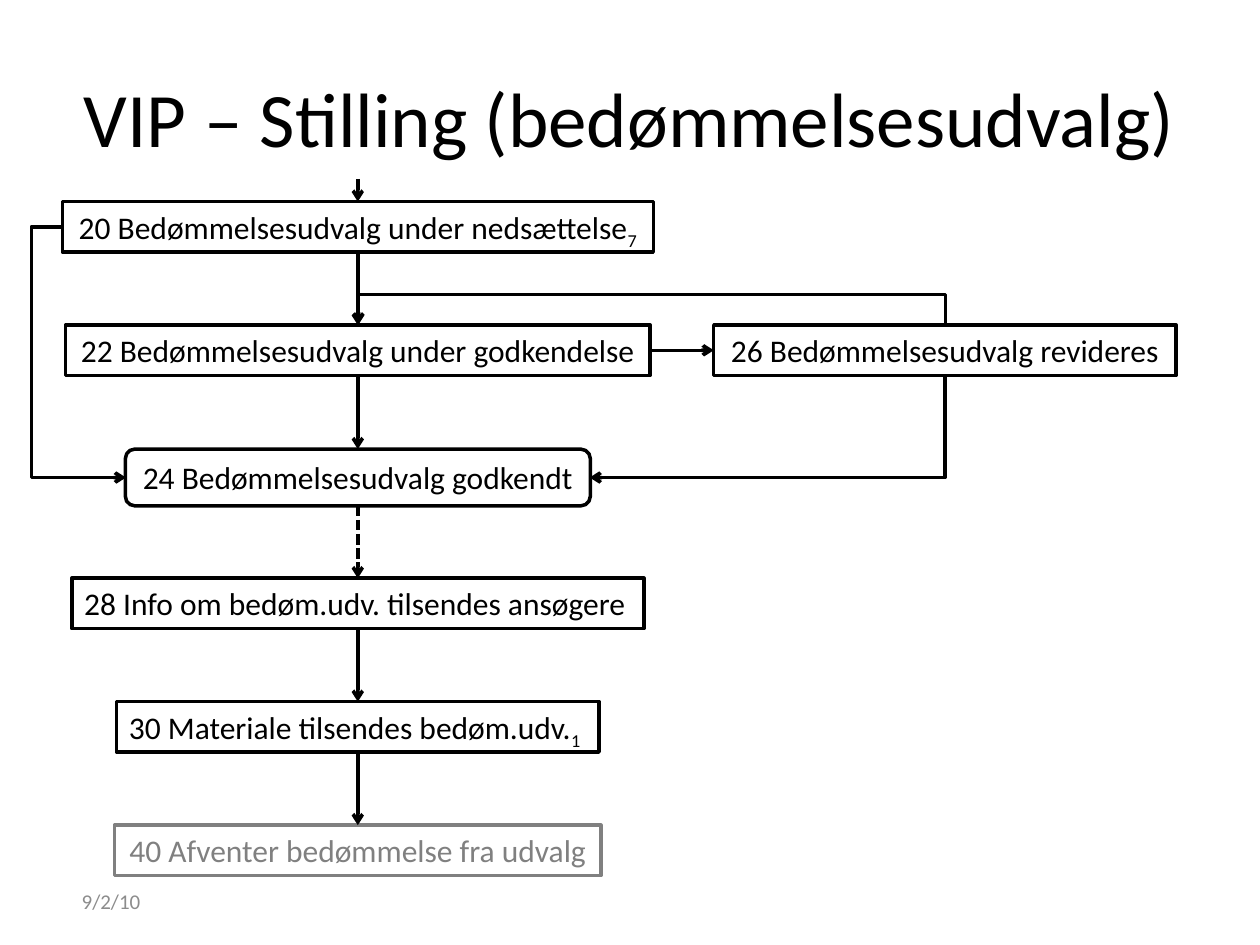
import pptx
import pptx.dml.color
import pptx.enum.dml
import pptx.enum.shapes
import pptx.enum.text
import pptx.oxml
import pptx.oxml.ns
import pptx.util
from lxml import etree

FONT = "Calibri"
BLACK, GREY, DATE_GREY = "000000", "808080", "8C8C8C"
TOP, LEFT, BOTTOM, RIGHT = range(4)  # connection sites of a box
ROW = 0.98
BOX_HEIGHT = 0.4
CENTER = pptx.enum.text.PP_ALIGN.CENTER
MIDDLE = pptx.enum.text.MSO_ANCHOR.MIDDLE
SHAPES = pptx.enum.shapes.MSO_SHAPE
CONNECTORS = pptx.enum.shapes.MSO_CONNECTOR

# number: (row, centre, width, height, colour, centred, text, subscript)
STEPS = {
    20: (0, 2.84, 4.69, BOX_HEIGHT, BLACK, True, "20 Bedømmelsesudvalg under nedsættelse", "7"),
    22: (1, 2.84, 4.64, BOX_HEIGHT, BLACK, True, "22 Bedømmelsesudvalg under godkendelse", ""),
    26: (1, 7.5, 3.67, BOX_HEIGHT, BLACK, True, "26 Bedømmelsesudvalg revideres", ""),
    24: (2.03, 2.84, 3.69, 0.45, BLACK, True, "24 Bedømmelsesudvalg godkendt", ""),
    28: (3.05, 2.84, 4.54, BOX_HEIGHT, BLACK, False, "28 Info om bedøm.udv. tilsendes ansøgere", ""),
    30: (4.05, 2.84, 3.83, BOX_HEIGHT, BLACK, False, "30 Materiale tilsendes bedøm.udv.", "1"),
    40: (5.05, 2.84, 3.86, BOX_HEIGHT, GREY, True, "40 Afventer bedømmelse fra udvalg", ""),
}


def color(value):
    return pptx.dml.color.RGBColor.from_string(value)


def inches(*values):
    return [pptx.util.Inches(value) for value in values]


def add_run(paragraph, text, size, hex_color):
    run = paragraph.add_run()
    run.text = text
    run.font.name = FONT
    run.font.size = pptx.util.Pt(size)
    run.font.color.rgb = color(hex_color)
    return run


def add_title(slide, box, text):
    title = slide.shapes.title
    title.left, title.top, title.width, title.height = inches(*box)
    title.text_frame.vertical_anchor = MIDDLE
    paragraph = title.text_frame.paragraphs[0]
    paragraph.alignment = CENTER
    add_run(paragraph, text, 44, BLACK)


def add_date(slide, box, text):
    frame = slide.shapes.add_textbox(*inches(*box)).text_frame
    frame.word_wrap = True
    frame.vertical_anchor = MIDDLE
    add_run(frame.paragraphs[0], text, 12, DATE_GREY)


def add_step(slide, box, preset, hex_color, centred, text, subscript):
    shape = slide.shapes.add_shape(preset, *inches(*box))
    shape.shadow.inherit = False
    shape.fill.background()
    shape.line.color.rgb = color(hex_color)
    shape.line.width = pptx.util.Pt(2)
    frame = shape.text_frame
    frame.word_wrap = not centred
    frame.auto_size = pptx.enum.text.MSO_AUTO_SIZE.SHAPE_TO_FIT_TEXT
    frame.vertical_anchor = pptx.enum.text.MSO_ANCHOR.TOP
    paragraph = frame.paragraphs[0]
    paragraph.alignment = CENTER if centred else pptx.enum.text.PP_ALIGN.LEFT
    add_run(paragraph, text, 18, hex_color)
    if subscript:
        run = add_run(paragraph, subscript, 18, hex_color)
        run.font._element.set("baseline", "-25000")
    return shape


def add_arrow(slide, kind, ends=(0, 0, 0, 0), start=None, end=None):
    """Arrow between two (shape, site) pairs, or between free ends."""
    arrow = slide.shapes.add_connector(kind, *inches(*ends))
    if start:
        arrow.begin_connect(*start)
    if end:
        arrow.end_connect(*end)
    arrow.line.color.rgb = color(BLACK)
    arrow.line.width = pptx.util.Pt(2)
    line = arrow.line._get_or_add_ln()
    etree.SubElement(line, pptx.oxml.ns.qn("a:tailEnd"), type="arrow")
    etree.SubElement(arrow._element.spPr, pptx.oxml.ns.qn("a:effectLst"))
    return arrow


def add_elbow(slide, start, end, box, preset, bend=None, rotation=0, flip=False):
    """Bent arrow; box is its unrotated frame, bend its share of that width."""
    arrow = add_arrow(slide, CONNECTORS.ELBOW, start=start, end=end)
    arrow.left, arrow.top, arrow.width, arrow.height = inches(*box)
    transform = arrow._element.spPr.find(pptx.oxml.ns.qn("a:xfrm"))
    for name in ("flipH", "flipV"):
        transform.attrib.pop(name, None)
    if rotation:
        transform.set("rot", str(rotation * 60000))
    if flip:
        transform.set("flipV", "1")
    geometry = arrow._element.spPr.find(pptx.oxml.ns.qn("a:prstGeom"))
    geometry.set("prst", preset)
    if bend is not None:
        guides = geometry.find(pptx.oxml.ns.qn("a:avLst"))
        etree.SubElement(guides, pptx.oxml.ns.qn("a:gd"), name="adj1",
                         fmla=f"val {round(bend * 100000)}")


def add_flow(slide, first_row):
    """Flow chart whose first row of boxes is centred at first_row."""
    steps = {}
    for number, (row, centre, width, height, *content) in STEPS.items():
        middle = first_row + row * ROW
        box = (centre - width / 2, middle - height / 2, width, height)
        preset = (SHAPES.FLOWCHART_ALTERNATE_PROCESS if number == 24
                  else SHAPES.FLOWCHART_PROCESS)
        steps[number] = add_step(slide, box, preset, *content)

    centre, edge = STEPS[20][1], first_row - BOX_HEIGHT / 2
    add_arrow(slide, CONNECTORS.STRAIGHT, (centre, edge - 0.18, centre, edge))
    column = (20, 22, 24, 28, 30, 40)
    for upper, lower in zip(column, column[1:]):
        arrow = add_arrow(slide, CONNECTORS.STRAIGHT,
                          start=(steps[upper], BOTTOM), end=(steps[lower], TOP))
        if upper == 24:
            arrow.line.dash_style = pptx.enum.dml.MSO_LINE.SQUARE_DOT
    add_arrow(slide, CONNECTORS.STRAIGHT,
              start=(steps[22], RIGHT), end=(steps[26], LEFT))

    add_elbow(slide, (steps[26], TOP), (steps[22], TOP),
              (5.17, first_row - 1.55, 0.01, 4.66), "bentConnector3",
              bend=25, rotation=270, flip=True)
    add_elbow(slide, (steps[26], BOTTOM), (steps[24], RIGHT),
              (5.69, first_row + 0.18, 0.8, 2.82), "bentConnector2", rotation=90)
    add_elbow(slide, (steps[20], LEFT), (steps[24], LEFT),
              (0.5, first_row, 0.5, 1.99), "bentConnector3", bend=-0.5)


def main():
    presentation = pptx.Presentation()
    presentation.slide_width, presentation.slide_height = inches(10, 7.5)
    slide = presentation.slides.add_slide(presentation.slide_layouts[5])
    add_title(slide, (0.5, 0.3, 9, 1.25), "VIP – Stilling (bedømmelsesudvalg)")
    add_flow(slide, 1.8)
    add_date(slide, (0.55, 6.95, 2.33, 0.4), "9/2/10")
    presentation.save("out.pptx")


if __name__ == "__main__":
    main()
